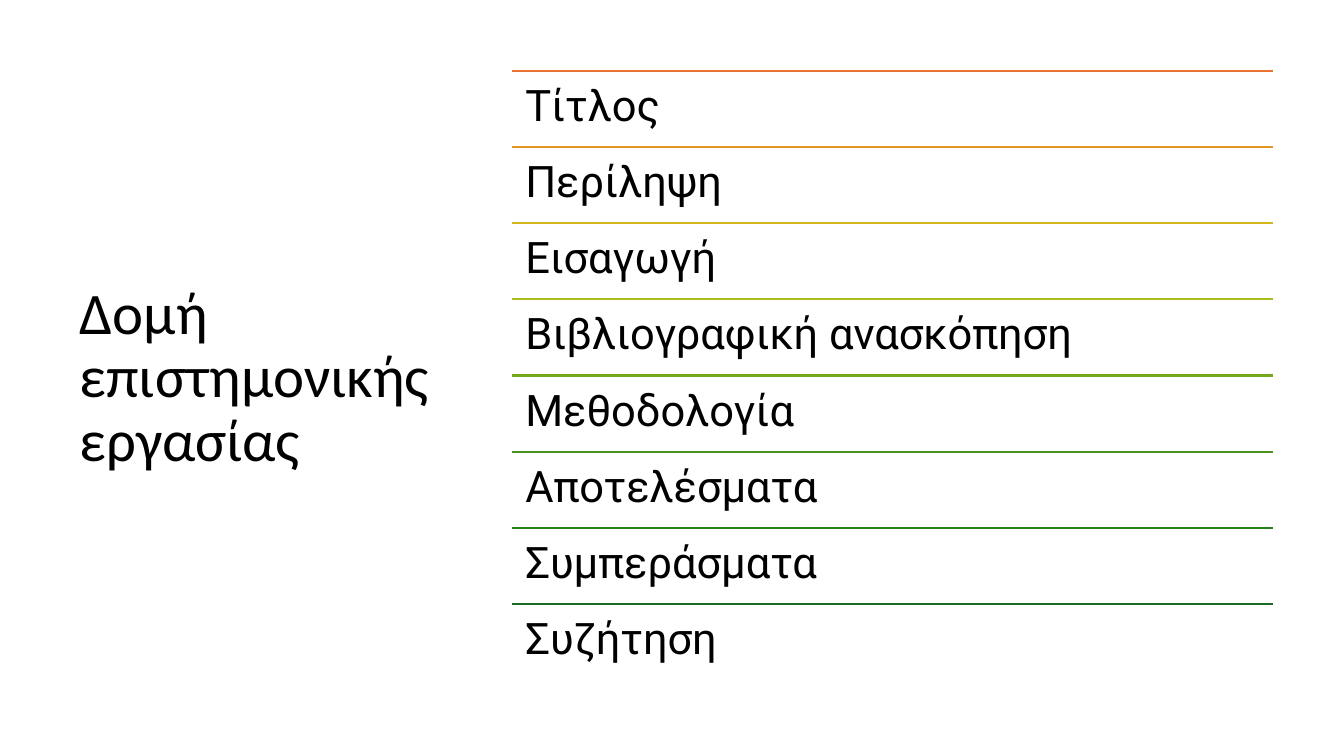
from pptx import Presentation
from pptx import util as u
from pptx.dml.color import RGBColor
from pptx.enum import shapes, text
from pptx.oxml.ns import qn
from lxml import etree

COLORS = {
    "text": "000000",
    "background": "FFFFFF",
    "Τίτλος": "E97132",
    "Περίληψη": "E49622",
    "Εισαγωγή": "D2B81E",
    "Βιβλιογραφική ανασκόπηση": "ABBC1E",
    "Μεθοδολογία": "75A71D",
    "Αποτελέσματα": "49931D",
    "Συμπεράσματα": "277F1B",
    "Συζήτηση": "196B24",
}
SECTIONS = [name for name in COLORS if name not in ("text", "background")]

LIST_LEFT, LIST_TOP, LIST_WIDTH = 5.08, 0.7, 7.55
ROW_HEIGHT = 6.05 / len(SECTIONS)


class SlideBuilder:
    title_font = "Calibri"
    title_size = 42
    section_font = "Roboto"
    section_size = 31
    line_spacing = 0.9
    section_inset = 0.13
    rule_width = 1.5

    def __init__(self, presentation):
        self.slide = presentation.slides.add_slide(presentation.slide_layouts[5])
        fill = self.slide.background.fill
        fill.solid()
        fill.fore_color.rgb = RGBColor.from_string(COLORS["background"])

    def set_wording(self, text_frame, wording, font_name, size):
        text_frame.text = wording
        text_frame.word_wrap = True
        text_frame.auto_size = text.MSO_AUTO_SIZE.NONE
        paragraph = text_frame.paragraphs[0]
        paragraph.alignment = text.PP_ALIGN.LEFT
        paragraph.line_spacing = self.line_spacing
        font = paragraph.runs[0].font
        font.name = font_name
        font.size = u.Pt(size)
        font.color.rgb = RGBColor.from_string(COLORS["text"])

    def title(self, wording, left, top, width, height):
        shape = self.slide.shapes.title
        shape.left, shape.top = u.Inches(left), u.Inches(top)
        shape.width, shape.height = u.Inches(width), u.Inches(height)
        self.set_wording(shape.text_frame, wording, self.title_font, self.title_size)
        shape.text_frame.vertical_anchor = text.MSO_ANCHOR.MIDDLE

    def rule(self, group, left, top, width, color):
        connector = group.shapes.add_connector(
            shapes.MSO_CONNECTOR.STRAIGHT,
            u.Inches(left), u.Inches(top), u.Inches(left + width), u.Inches(top),
        )
        connector.line.color.rgb = RGBColor.from_string(color)
        connector.line.width = u.Pt(self.rule_width)
        etree.SubElement(connector._element.spPr, qn("a:effectLst"))

    def section(self, group, wording, left, top, width, height):
        shape = group.shapes.add_textbox(
            u.Inches(left), u.Inches(top), u.Inches(width), u.Inches(height)
        )
        text_frame = shape.text_frame
        self.set_wording(text_frame, wording, self.section_font, self.section_size)
        text_frame.vertical_anchor = text.MSO_ANCHOR.TOP
        inset = u.Inches(self.section_inset)
        text_frame.margin_left = text_frame.margin_right = inset
        text_frame.margin_top = text_frame.margin_bottom = inset

    def section_list(self, names):
        group = self.slide.shapes.add_group_shape()
        for index, name in enumerate(names):
            top = LIST_TOP + index * ROW_HEIGHT
            self.rule(group, LIST_LEFT, top, LIST_WIDTH, COLORS[name])
            self.section(group, name, LIST_LEFT, top, LIST_WIDTH, ROW_HEIGHT)


def main():
    presentation = Presentation()
    presentation.slide_width = u.Inches(13.33)
    presentation.slide_height = u.Inches(7.5)
    builder = SlideBuilder(presentation)
    builder.title("Δομή επιστημονικής εργασίας", 0.69, 0.7, 3.74, 6.11)
    builder.section_list(SECTIONS)
    presentation.save("out.pptx")


if __name__ == "__main__":
    main()
